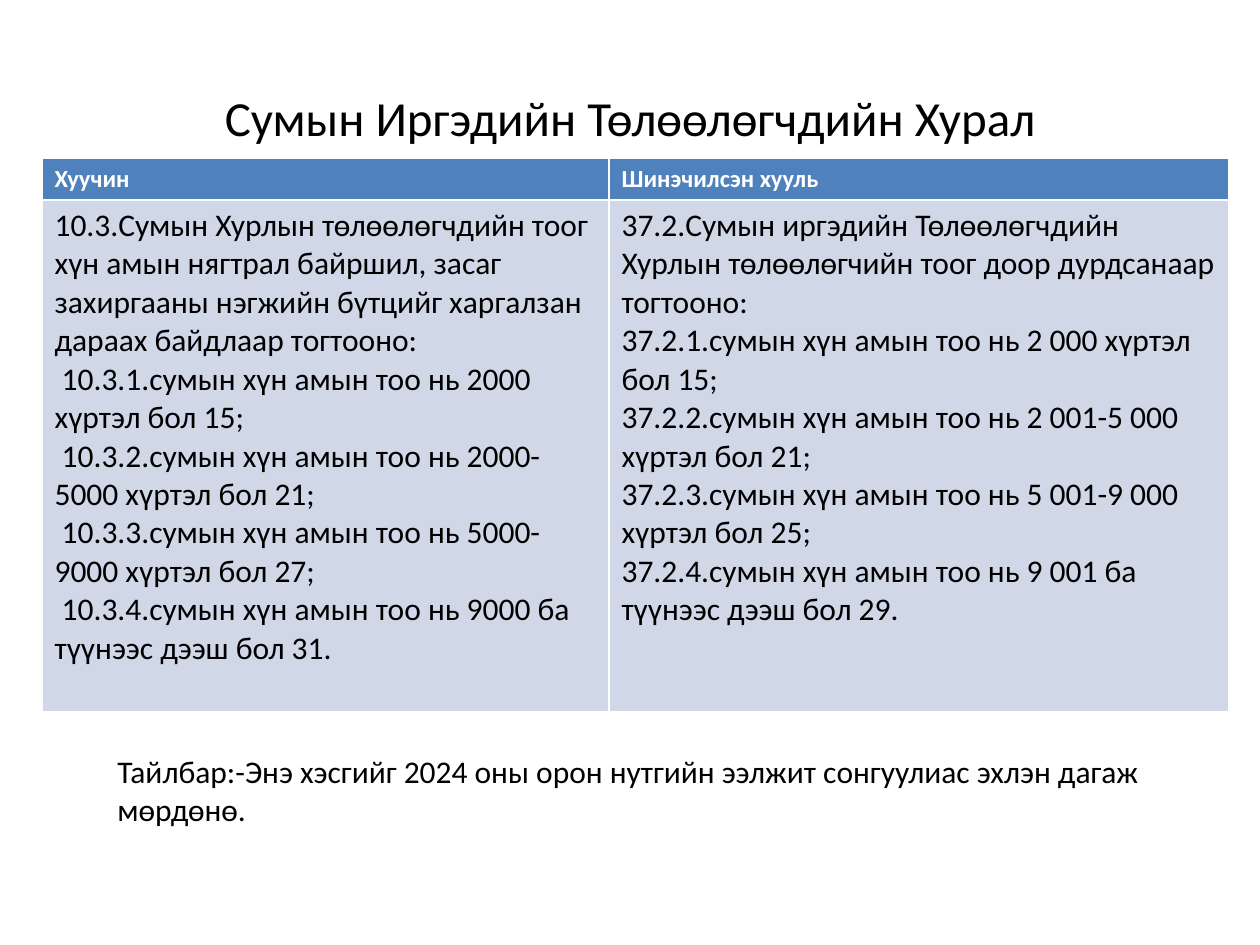
from pptx import Presentation, util as u
from pptx.dml.color import RGBColor
from pptx.enum import text

PX = 914400 // 126
BLACK = RGBColor(0x00, 0x00, 0x00)
WHITE = RGBColor(0xFF, 0xFF, 0xFF)
BLUE = RGBColor(0x4F, 0x81, 0xBD)
PALE_BLUE = RGBColor(0xD0, 0xD8, 0xE8)
FONT = "Calibri"

TITLE = "Сумын Иргэдийн Төлөөлөгчдийн Хурал"
NOTE = "Тайлбар:-Энэ хэсгийг 2024 оны орон нутгийн ээлжит сонгуулиас эхлэн дагаж мөрдөнө."
HEADERS = ["Хуучин", "Шинэчилсэн хууль"]
OLD_LAW = [
    "10.3.Сумын Хурлын төлөөлөгчдийн тоог хүн амын нягтрал байршил, засаг захиргааны нэгжийн бүтцийг харгалзан дараах байдлаар тогтооно: ",
    " 10.3.1.сумын хүн амын тоо нь 2000 хүртэл бол 15;",
    " 10.3.2.сумын хүн амын тоо нь 2000-5000 хүртэл бол 21;",
    " 10.3.3.сумын хүн амын тоо нь 5000-9000 хүртэл бол 27;",
    " 10.3.4.сумын хүн амын тоо нь 9000 ба түүнээс дээш бол 31.",
]
NEW_LAW = [
    "37.2.Сумын иргэдийн Төлөөлөгчдийн Хурлын төлөөлөгчийн тоог доор дурдсанаар тогтооно: ",
    "37.2.1.сумын хүн амын тоо нь 2 000 хүртэл бол 15;",
    "37.2.2.сумын хүн амын тоо нь 2 001-5 000 хүртэл бол 21;",
    "37.2.3.сумын хүн амын тоо нь 5 001-9 000 хүртэл бол 25;",
    "37.2.4.сумын хүн амын тоо нь 9 001 ба түүнээс дээш бол 29.",
]
COLUMN_WIDTHS = [567, 620]
ROW_HEIGHTS = [42, 512]
# content, size, colour, bold and fill of each table row
ROWS = [
    ([[header] for header in HEADERS], 14, WHITE, True, BLUE),
    ([OLD_LAW, NEW_LAW], 18, BLACK, False, PALE_BLUE),
]


def box(left, top, width, height):
    return [value * PX for value in (left, top, width, height)]


def write(frame, lines, size, color=BLACK, bold=False, align=None):
    for index, line in enumerate(lines):
        paragraph = frame.paragraphs[0] if index == 0 else frame.add_paragraph()
        paragraph.alignment = align
        run = paragraph.add_run()
        run.text = line
        run.font.name = FONT
        run.font.size = u.Pt(size)
        run.font.bold = bold
        run.font.color.rgb = color


def add_text(slide, place, line, size, align=None, anchor=text.MSO_ANCHOR.TOP):
    frame = slide.shapes.add_textbox(*box(*place)).text_frame
    frame.word_wrap = True
    frame.vertical_anchor = anchor
    write(frame, [line], size, align=align)


def add_comparison(slide):
    place = box(42, 158, sum(COLUMN_WIDTHS), sum(ROW_HEIGHTS))
    table = slide.shapes.add_table(len(ROWS), len(HEADERS), *place).table
    for column, width in zip(table.columns, COLUMN_WIDTHS):
        column.width = width * PX
    for row, height, (contents, size, color, bold, fill) in zip(table.rows, ROW_HEIGHTS, ROWS):
        row.height = height * PX
        for cell, lines in zip(row.cells, contents):
            cell.fill.solid()
            cell.fill.fore_color.rgb = fill
            write(cell.text_frame, lines, size, color, bold)


def main():
    presentation = Presentation()
    presentation.slide_width = 1260 * PX
    presentation.slide_height = 945 * PX
    slide = presentation.slides.add_slide(presentation.slide_layouts[6])

    # Title
    add_text(slide, (63, 38, 1134, 158), TITLE, 28, text.PP_ALIGN.CENTER, text.MSO_ANCHOR.MIDDLE)
    # Old and new law side by side
    add_comparison(slide)
    # Explanatory note
    add_text(slide, (105, 746, 1061, 89), NOTE, 18)

    presentation.save("out.pptx")


if __name__ == "__main__":
    main()
